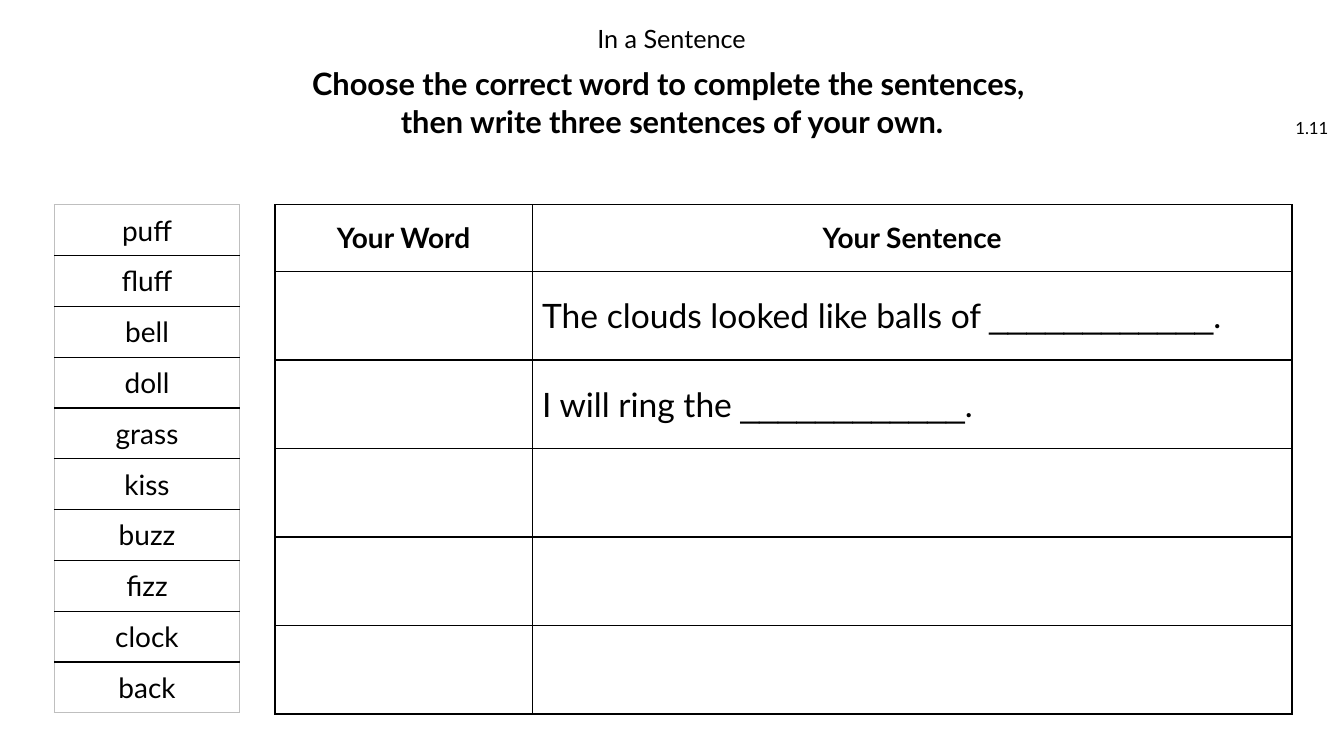
from lxml.etree import SubElement
from pptx import Presentation
from pptx.dml.color import RGBColor
from pptx.enum.text import MSO_ANCHOR as Anchor, PP_ALIGN as Align
from pptx.oxml.ns import qn
from pptx.util import Cm, Pt

COLORS = {"ink": "000000", "paper": "FFFFFF", "frame": "BFBFBF"}
TITLE = "In a Sentence"
INSTRUCTIONS = ["Choose the correct word to complete the sentences, ",
                "then write three sentences of your own."]
LESSON = "1.11"
WORDS = ["puff", "fluff", "bell", "doll", "grass",
         "kiss", "buzz", "fizz", "clock", "back"]
HEADINGS = ["Your Word", "Your Sentence"]
BLANK = "____________"
SENTENCE_STARTS = ["The clouds looked like balls of ", "I will ring the "]
SENTENCE_ROWS = 5

TABLE_TOP = 5.16
WORD_LEFT, WORD_WIDTH, WORD_HEIGHT = 1.37, 4.67, 1.28
SENTENCE_LEFT, SENTENCE_WIDTHS = 6.93, [6.48, 19.15]
HEADING_HEIGHT, SENTENCE_HEIGHT = 1.68, 2.23

HEADING = {"size": Pt(20), "bold": True}
WORD = {"size": Pt(20)}
SENTENCE = {"size": Pt(24)}


def add_run(paragraph, text, font_format):
    run = paragraph.add_run()
    run.text = text
    for name, value in {"name": "Lato", "bold": False, **font_format}.items():
        setattr(run.font, name, value)
    run.font.color.rgb = RGBColor.from_string(COLORS["ink"])


def fill_frame(frame, lines, font_format, paragraph_format):
    frame.word_wrap = True
    frame.vertical_anchor = Anchor.MIDDLE
    for index, line in enumerate(lines):
        paragraph = frame.add_paragraph() if index else frame.paragraphs[0]
        for name, value in paragraph_format.items():
            setattr(paragraph, name, value)
        add_run(paragraph, line, font_format)


def set_borders(cell, side_colors):
    properties = cell._tc.get_or_add_tcPr()
    for index, (side, color) in enumerate(side_colors.items()):
        line = SubElement(properties, qn(f"a:ln{side}"), w=str(Pt(1)))
        fill = SubElement(line, qn("a:solidFill"))
        SubElement(fill, qn("a:srgbClr"), val=COLORS[color])
        properties.insert(index, line)


def add_grid(slide, left, widths, heights, frame_color):
    """Add a plain white table with black inner lines and the given outer colour."""
    table = slide.shapes.add_table(
        len(heights), len(widths), Cm(left), Cm(TABLE_TOP),
        Cm(sum(widths)), Cm(sum(heights))).table
    table.first_row = table.horz_banding = False
    for column, width in zip(table.columns, widths):
        column.width = Cm(width)
    for row_index, height in enumerate(heights):
        table.rows[row_index].height = Cm(height)
        for column_index in range(len(widths)):
            cell = table.cell(row_index, column_index)
            cell.vertical_anchor = Anchor.MIDDLE
            cell.fill.solid()
            cell.fill.fore_color.rgb = RGBColor.from_string(COLORS["paper"])
            outer = {"L": column_index == 0, "R": column_index == len(widths) - 1,
                     "T": row_index == 0, "B": row_index == len(heights) - 1}
            set_borders(cell, {side: frame_color if is_outer else "ink"
                               for side, is_outer in outer.items()})
    return table


def write_cell(cell, parts, align):
    paragraph = cell.text_frame.paragraphs[0]
    paragraph.alignment = align
    for text, font_format in parts:
        add_run(paragraph, text, font_format)


def main():
    presentation = Presentation()
    presentation.slide_width, presentation.slide_height = Cm(33.87), Cm(19.05)
    slide = presentation.slides.add_slide(presentation.slide_layouts[5])

    title = slide.shapes.title
    title.left, title.top, title.width, title.height = Cm(9.7), Cm(0.58), Cm(14.45), Cm(0.89)
    fill_frame(title.text_frame, [TITLE], {"size": Pt(18)},
               {"alignment": Align.CENTER, "line_spacing": 0.9})

    instructions = slide.shapes.add_textbox(Cm(5), Cm(1.52), Cm(23.88), Cm(2.08))
    fill_frame(instructions.text_frame, INSTRUCTIONS, {"size": Pt(22), "bold": True},
               {"alignment": Align.CENTER, "line_spacing": Pt(27)})

    lesson = slide.shapes.add_textbox(Cm(31.88), Cm(2.72), Cm(1.6), Cm(1.02))
    fill_frame(lesson.text_frame, [LESSON], {"size": Pt(12)}, {"alignment": Align.RIGHT})
    lesson.text_frame.margin_left = lesson.text_frame.margin_right = Cm(0)

    word_table = add_grid(slide, WORD_LEFT, [WORD_WIDTH],
                          [WORD_HEIGHT] * len(WORDS), "frame")
    for row, word in enumerate(WORDS):
        write_cell(word_table.cell(row, 0), [(word, WORD)], Align.CENTER)

    sentence_table = add_grid(slide, SENTENCE_LEFT, SENTENCE_WIDTHS,
                              [HEADING_HEIGHT] + [SENTENCE_HEIGHT] * SENTENCE_ROWS, "ink")
    for column, heading in enumerate(HEADINGS):
        write_cell(sentence_table.cell(0, column), [(heading, HEADING)], Align.CENTER)
    for row, start in enumerate(SENTENCE_STARTS, 1):
        parts = [(start, SENTENCE), (BLANK, {**SENTENCE, "name": "Arial"}), (".", SENTENCE)]
        write_cell(sentence_table.cell(row, 1), parts, Align.LEFT)

    presentation.save("out.pptx")


if __name__ == "__main__":
    main()
